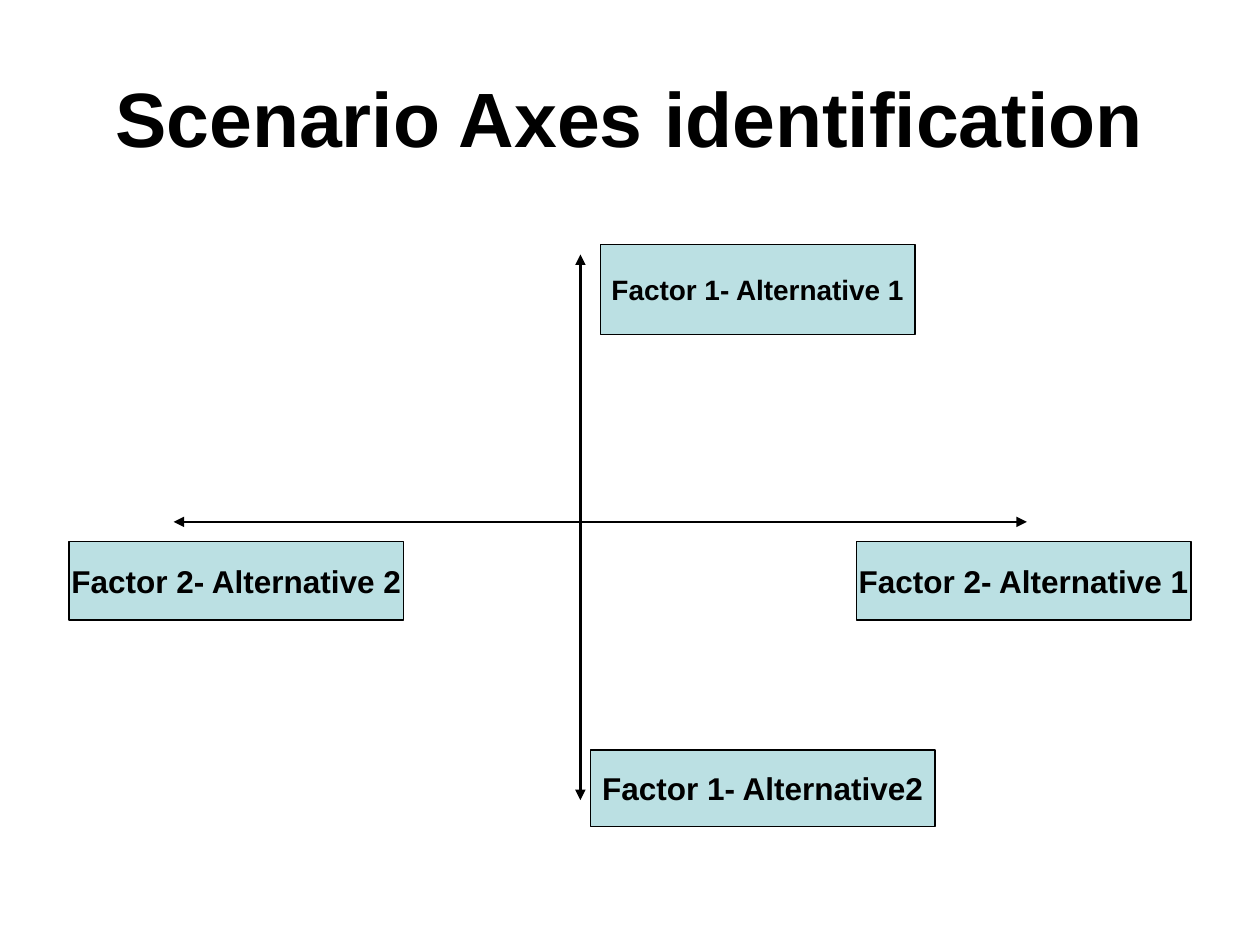
from dataclasses import dataclass

from pptx import Presentation
from pptx.dml.color import RGBColor
from pptx.enum.shapes import MSO_CONNECTOR, MSO_SHAPE
from pptx.enum.text import MSO_ANCHOR, MSO_AUTO_SIZE, PP_ALIGN
from pptx.oxml.ns import qn
from pptx.util import Cm, Pt
from lxml.etree import SubElement


@dataclass(frozen=True)
class Theme:
    font: str = "Arial"
    ink: RGBColor = RGBColor(0x00, 0x00, 0x00)
    box: RGBColor = RGBColor(0xBB, 0xE0, 0xE3)
    title_size: int = 44
    label_size: int = 18
    small_label_size: int = 16
    axis_width: float = 1.5
    border_width: float = 0.75


theme = Theme()


def set_text(sp, text, size):
    """Put one bold, centred line of text in a shape."""
    tf = sp.text_frame
    tf.text = text
    tf.auto_size = MSO_AUTO_SIZE.NONE
    tf.vertical_anchor = MSO_ANCHOR.MIDDLE
    p = tf.paragraphs[0]
    p.alignment = PP_ALIGN.CENTER
    font = p.runs[0].font
    font.name, font.size, font.bold = theme.font, Pt(size), True
    font.color.rgb = theme.ink


prs = Presentation()
prs.slide_width, prs.slide_height = Cm(25.4), Cm(19.05)
s = prs.slides.add_slide(prs.slide_layouts[5])

title = s.shapes.title
title.left, title.top, title.width, title.height = Cm(1.27), Cm(0.76), Cm(22.86), Cm(3.18)
set_text(title, "Scenario Axes identification", theme.title_size)

# Axes: x1, y1, x2, y2 in cm
axes = [
    (3.5, 10.52, 20.7, 10.52),
    (11.7, 5.13, 11.7, 16.13),
]
for ends in axes:
    axis = s.shapes.add_connector(MSO_CONNECTOR.STRAIGHT, *map(Cm, ends))
    axis.line.color.rgb = theme.ink
    axis.line.width = Pt(theme.axis_width)
    ln = axis.line._get_or_add_ln()
    for end in ("a:headEnd", "a:tailEnd"):
        SubElement(ln, qn(end), type="triangle")
    SubElement(axis._element.spPr, qn("a:effectLst"))

# Labels at the axis ends: text, left, top, width, height in cm, type size
labels = [
    ("Factor 1- Alternative 1", 12.1, 4.93, 6.35, 1.82, theme.small_label_size),
    ("Factor 2- Alternative 2", 1.39, 10.92, 6.75, 1.58, theme.label_size),
    ("Factor 1- Alternative2", 11.9, 15.12, 6.95, 1.54, theme.label_size),
    ("Factor 2- Alternative 1", 17.26, 10.92, 6.75, 1.58, theme.label_size),
]
for text, left, top, width, height, size in labels:
    sp = s.shapes.add_shape(MSO_SHAPE.RECTANGLE, Cm(left), Cm(top), Cm(width), Cm(height))
    sp.shadow.inherit = False
    sp.fill.solid()
    sp.fill.fore_color.rgb = theme.box
    sp.line.color.rgb = theme.ink
    sp.line.width = Pt(theme.border_width)
    set_text(sp, text, size)
    sp.text_frame.word_wrap = False

prs.save("out.pptx")
